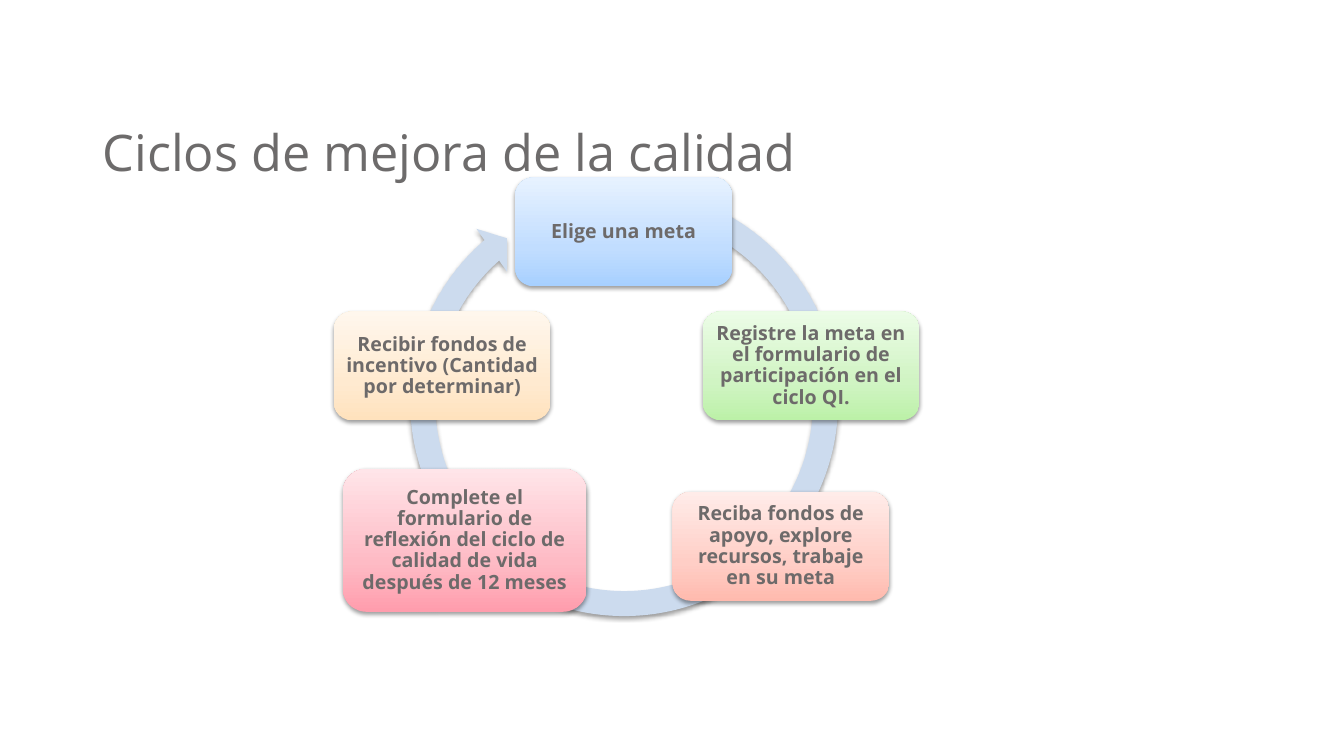
from copy import deepcopy
from dataclasses import dataclass

from lxml.etree import SubElement
from pptx import Presentation
from pptx.dml.color import RGBColor
from pptx.enum.shapes import MSO_SHAPE as Preset
from pptx.enum.text import MSO_ANCHOR as Anchor, MSO_AUTO_SIZE as AutoSize, PP_ALIGN as Align
from pptx.oxml.ns import qn
from pptx.util import Inches, Pt

SLIDE_W, SLIDE_H = Inches(13.33), Inches(7.5)


@dataclass(frozen=True)
class Theme:
    font: str = "Open Sans"
    title_size: int = 36
    step_size: int = 14
    title_color: str = "6D6B6B"
    step_color: str = "6D6A6A"
    ring: str = "CCDBEE"
    # Gradient stops run from the bottom edge to the top edge
    stops: tuple = (0, 0.35, 1)
    blue: tuple = ("A7D0FF", "C1DDFF", "E7F2FF")
    green: tuple = ("BCF1A8", "D0F4C3", "ECFCE7")
    coral: tuple = ("FFBAAE", "FFCEC6", "FFECE9")
    pink: tuple = ("FF9DAD", "FEBBC5", "FFE5E9")
    orange: tuple = ("FFE2BD", "FFEAD0", "FFF7ED")


THEME = Theme()

# Centres and sizes are percentages of the slide's width and height
STEP_SIZE = (16.13, 14.4)
WIDE_STEP_SIZE = (18.15, 18.93)
RING_CENTER, RING_SIZE = (46.44, 53.2), (33.91, 60.27)
RING_ARC = (0.055, 3.307, 137.362, 174.102, 0.058)
STEPS = [
    ("Elige una meta", (46.4, 30.67), STEP_SIZE, THEME.blue),
    ("Registre la meta en el formulario de participación en el ciclo QI.",
     (60.35, 48.4), STEP_SIZE, THEME.green),
    ("Reciba fondos de apoyo, explore recursos, trabaje en su meta",
     (58.1, 72.27), STEP_SIZE, THEME.coral),
    ("Complete el formulario de reflexión del ciclo de calidad de vida después de 12 meses",
     (34.58, 71.47), WIDE_STEP_SIZE, THEME.pink),
    ("Recibir fondos de incentivo (Cantidad por determinar)",
     (32.9, 48.4), STEP_SIZE, THEME.orange),
]


def frame(center, size):
    """Turn a centre and size in slide percentages into left, top, width, height."""
    (x, y), (w, h) = center, size
    return (int(SLIDE_W * (x - w / 2) / 100), int(SLIDE_H * (y - h / 2) / 100),
            int(SLIDE_W * w / 100), int(SLIDE_H * h / 100))


def add_shadow(shape):
    shape.shadow.inherit = False
    effects = shape._element.spPr.find(qn("a:effectLst"))
    shadow = SubElement(effects, qn("a:outerShdw"), blurRad=str(Pt(3.1)), dist=str(Pt(1.6)),
                        dir="5400000", rotWithShape="0")
    black = SubElement(shadow, qn("a:srgbClr"), val="000000")
    SubElement(black, qn("a:alpha"), val="38000")


def fill_gradient(shape, colors):
    shape.fill.gradient()
    shape.fill.gradient_angle = 90
    stop_list = shape._element.spPr.find(qn("a:gradFill")).find(qn("a:gsLst"))
    stop_list.append(deepcopy(stop_list[0]))
    for stop, position, color in zip(shape.fill.gradient_stops, THEME.stops, colors):
        stop.position = position
        stop.color.rgb = RGBColor.from_string(color)


def write(text_frame, words, size, color, inset, anchor, align, spacing, bold=False):
    text_frame.word_wrap = True
    text_frame.auto_size = AutoSize.NONE
    text_frame.vertical_anchor = anchor
    text_frame.margin_left = text_frame.margin_right = Inches(inset[0])
    text_frame.margin_top = text_frame.margin_bottom = Inches(inset[1])
    paragraph = text_frame.paragraphs[0]
    paragraph.alignment = align
    paragraph.line_spacing = spacing
    run = paragraph.add_run()
    run.text = words
    run.font.name, run.font.size, run.font.bold = THEME.font, Pt(size), bold
    run.font.color.rgb = RGBColor.from_string(color)


def add_title(slide, words):
    title = slide.shapes.add_textbox(*frame((44.26, 15), (74.72, 19.33)))
    write(title.text_frame, words, THEME.title_size, THEME.title_color,
          (0.1, 0.05), Anchor.BOTTOM, Align.LEFT, 2.44)


def add_ring(cycle):
    ring = cycle.shapes.add_shape(Preset.CIRCULAR_ARROW, *frame(RING_CENTER, RING_SIZE))
    for index, value in enumerate(RING_ARC):
        ring.adjustments[index] = value
    ring.fill.solid()
    ring.fill.fore_color.rgb = RGBColor.from_string(THEME.ring)
    ring.line.fill.background()
    add_shadow(ring)


def add_step(cycle, words, center, size, colors):
    step = cycle.shapes.add_shape(Preset.ROUNDED_RECTANGLE, *frame(center, size))
    fill_gradient(step, colors)
    step.line.fill.background()
    add_shadow(step)
    write(step.text_frame, words, THEME.step_size, THEME.step_color,
          (0.06, 0.06), Anchor.MIDDLE, Align.CENTER, 0.9, bold=True)


def main():
    deck = Presentation()
    deck.slide_width, deck.slide_height = SLIDE_W, SLIDE_H
    slide = deck.slides.add_slide(deck.slide_layouts[6])

    # Heading
    add_title(slide, "Ciclos de mejora de la calidad")

    # Cycle: the ring lies behind its five steps
    cycle = slide.shapes.add_group_shape()
    add_ring(cycle)
    for step in STEPS:
        add_step(cycle, *step)

    deck.save("out.pptx")


if __name__ == "__main__":
    main()
